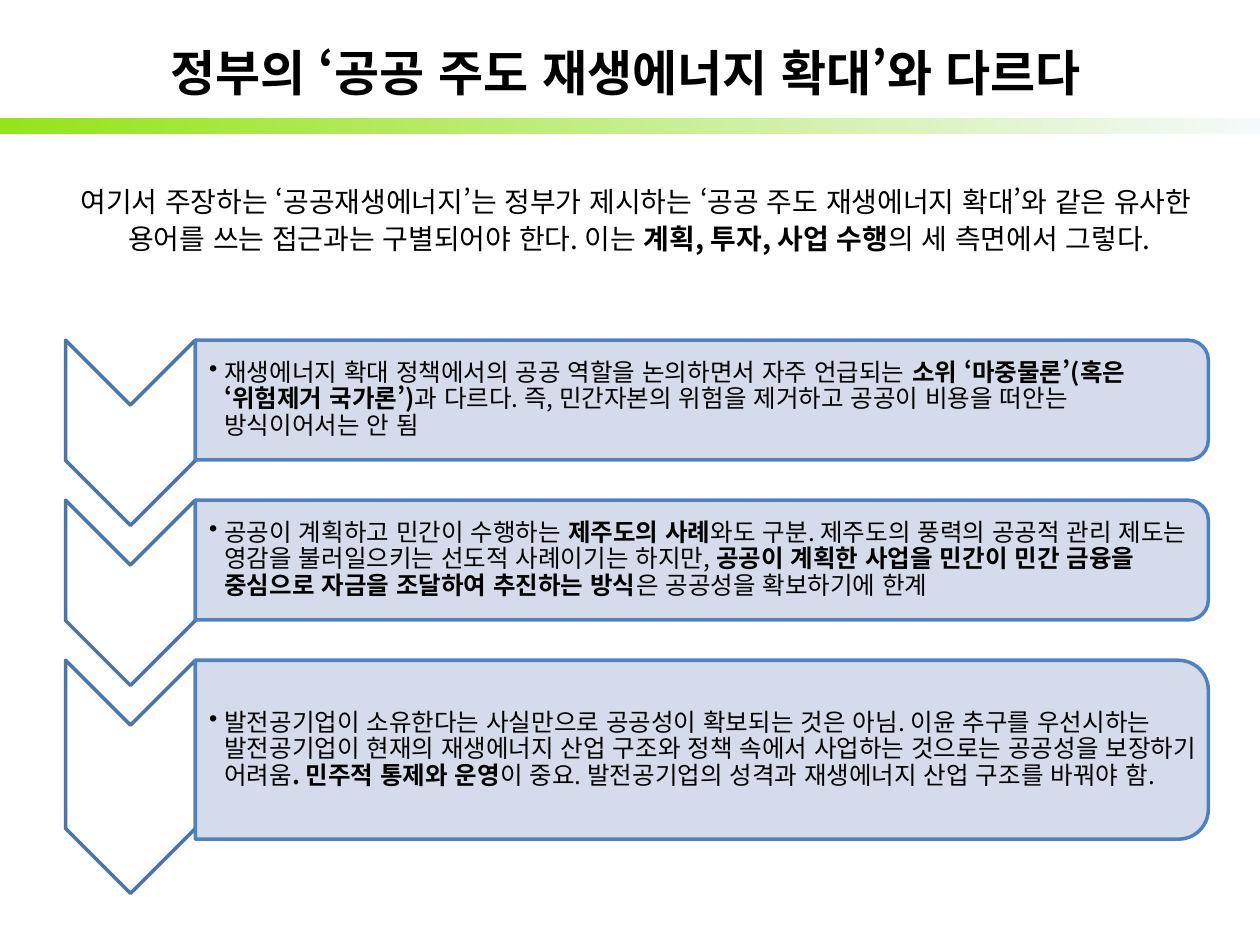
from lxml.etree import SubElement
from pptx import Presentation
from pptx.dml.color import RGBColor
from pptx.enum.lang import MSO_LANGUAGE_ID
from pptx.enum.shapes import MSO_SHAPE
from pptx.enum.text import MSO_ANCHOR, MSO_AUTO_SIZE, PP_ALIGN
from pptx.oxml.ns import qn
from pptx.util import Inches, Pt

FONT = "Noto Sans CJK KR"
BLACK = RGBColor(0, 0, 0)
WHITE = RGBColor(255, 255, 255)
GREEN = RGBColor(0x94, 0xE4, 0x17)
PALE = RGBColor(0xF6, 0xF9, 0xFC)
BAR_FILL = RGBColor(0xD0, 0xD8, 0xE8)
BAR_LINE = RGBColor(0x4F, 0x81, 0xBD)
CHEVRON_LINE = RGBColor(0x48, 0x75, 0xAC)

TITLE = "정부의 ‘공공 주도 재생에너지 확대’와 다르다"
INTRO = [
    ("여기서 주장하는 ‘공공재생에너지’는 정부가 제시하는 ‘공공 주도 재생에너지 확대’와 "
     "같은 유사한 용어를 쓰는 접근과는 구별되어야 한다. 이는 ", False),
    ("계획, 투자, 사업 수행", True),
    ("의 세 측면에서 그렇다.", False),
]
POINTS = [
    (0.95, 1.47, 0.86, [
        ("재생에너지 확대 정책에서의 공공 역할을 논의하면서 자주 언급되는 ", False),
        ("소위 ‘마중물론’(혹은 ‘위험제거 국가론’)", True),
        ("과 다르다. 즉, 민간자본의 위험을 제거하고 공공이 비용을 떠안는 방식이어서는 안 됨", False),
    ]),
    (0.95, 1.47, 0.86, [
        ("공공이 계획하고 민간이 수행하는 ", False),
        ("제주도의 사례", True),
        ("와도 구분. 제주도의 풍력의 공공적 관리 제도는 영감을 불러일으키는 "
         "선도적 사례이기는 하지만, ", False),
        ("공공이 계획한 사업을 민간이 민간 금융을 중심으로 자금을 조달하여 추진하는 방식", True),
        ("은 공공성을 확보하기에 한계", False),
    ]),
    (1.42, 1.85, 1.28, [
        ("발전공기업이 소유한다는 사실만으로 공공성이 확보되는 것은 아님. 이윤 추구를 "
         "우선시하는 발전공기업이 현재의 재생에너지 산업 구조와 정책 속에서 사업하는 "
         "것으로는 공공성을 보장하기 어려움", False),
        (". 민주적 통제와 운영", True),
        ("이 중요. 발전공기업의 성격과 재생에너지 산업 구조를 바꿔야 함.", False),
    ]),
]
ROW_PITCH = 1.27


def format_span(span, size, bold):
    span.font.name = FONT
    span.font.size = Pt(size)
    span.font.bold = bold
    span.font.color.rgb = BLACK
    span.font.language_id = MSO_LANGUAGE_ID.KOREAN
    latin = span.font._element.find(qn("a:latin"))
    east_asian = latin.makeelement(qn("a:ea"), {"typeface": FONT})
    latin.addnext(east_asian)


def fill_paragraph(para, spans, size, hanging, line_spacing):
    para.line_spacing = line_spacing
    properties = para._p.get_or_add_pPr()
    properties.set("marL", str(Inches(hanging)))
    properties.set("indent", str(-Inches(hanging)))
    for text, bold in spans:
        span = para.add_run()
        span.text = text
        format_span(span, size, bold)


def add_title(page, left, top, width, height):
    title = page.shapes.title
    title.left, title.top = Inches(left), Inches(top)
    title.width, title.height = Inches(width), Inches(height)
    frame = title.text_frame
    frame.text = TITLE
    frame.auto_size = MSO_AUTO_SIZE.NONE
    frame.vertical_anchor = MSO_ANCHOR.MIDDLE
    para = frame.paragraphs[0]
    para.alignment = PP_ALIGN.CENTER
    format_span(para.runs[0], 28, True)


def add_title_band(page, left, top, width, height):
    band = page.shapes.add_shape(
        MSO_SHAPE.RECTANGLE, Inches(left), Inches(top), Inches(width), Inches(height))
    band.shadow.inherit = False
    band.line.fill.background()
    band.fill.gradient()
    band.fill.gradient_angle = 180
    for stop, color in zip(band.fill.gradient_stops, (PALE, GREEN)):
        stop.color.rgb = color


def add_text(page, left, top, width, height):
    box = page.shapes.add_textbox(Inches(left), Inches(top), Inches(width), Inches(height))
    box.text_frame.word_wrap = True
    return box.text_frame


def add_intro(page, left, top, width, height):
    para = add_text(page, left, top, width, height).paragraphs[0]
    para.space_before = Pt(3)
    fill_paragraph(para, INTRO, 16, 0.38, 1.1)


def add_turned_shape(page, kind, left, top, width, height, fill, line):
    shape = page.shapes.add_shape(
        kind, Inches(left + (width - height) / 2), Inches(top + (height - width) / 2),
        Inches(height), Inches(width))
    shape.rotation = 90
    shape.shadow.inherit = False
    shape.fill.solid()
    shape.fill.fore_color.rgb = fill
    shape.line.color.rgb = line
    shape.line.width = Pt(2)
    return shape


def add_point(page, left, top, bar_height, chevron_height, text_height, spans):
    bar_left = left + 1.03
    add_turned_shape(page, MSO_SHAPE.CHEVRON, left, top, 1.03, chevron_height,
                     WHITE, CHEVRON_LINE)
    bar = add_turned_shape(page, MSO_SHAPE.ROUND_2_SAME_RECTANGLE, bar_left, top, 8.04,
                           bar_height, BAR_FILL, BAR_LINE)
    color = bar.fill._xPr.find(qn("a:solidFill"))[0]
    SubElement(color, qn("a:alpha"), val="90000")

    frame = add_text(page, bar_left, top + (bar_height - text_height) / 2, 7.99, text_height)
    frame.vertical_anchor = MSO_ANCHOR.MIDDLE
    frame.margin_left = Inches(0.11)
    frame.margin_top = frame.margin_right = frame.margin_bottom = Inches(0.01)
    para = frame.paragraphs[0]
    fill_paragraph(para, spans, 14, 0.12, 0.9)
    SubElement(para._p.get_or_add_pPr(), qn("a:buChar"), char="•")


def add_points(page, left, top):
    for row, point in enumerate(POINTS):
        add_point(page, left, top + row * ROW_PITCH, *point)


def main():
    deck = Presentation()
    deck.slide_width, deck.slide_height = Inches(10), Inches(7.5)
    page = deck.slides.add_slide(deck.slide_layouts[5])
    add_title_band(page, 0, 0.94, 10, 0.12)
    add_title(page, 0.28, 0.3, 9.37, 0.54)
    add_intro(page, 0.54, 1.39, 9.14, 1.03)
    add_points(page, 0.52, 2.7)
    deck.save("out.pptx")


if __name__ == "__main__":
    main()
